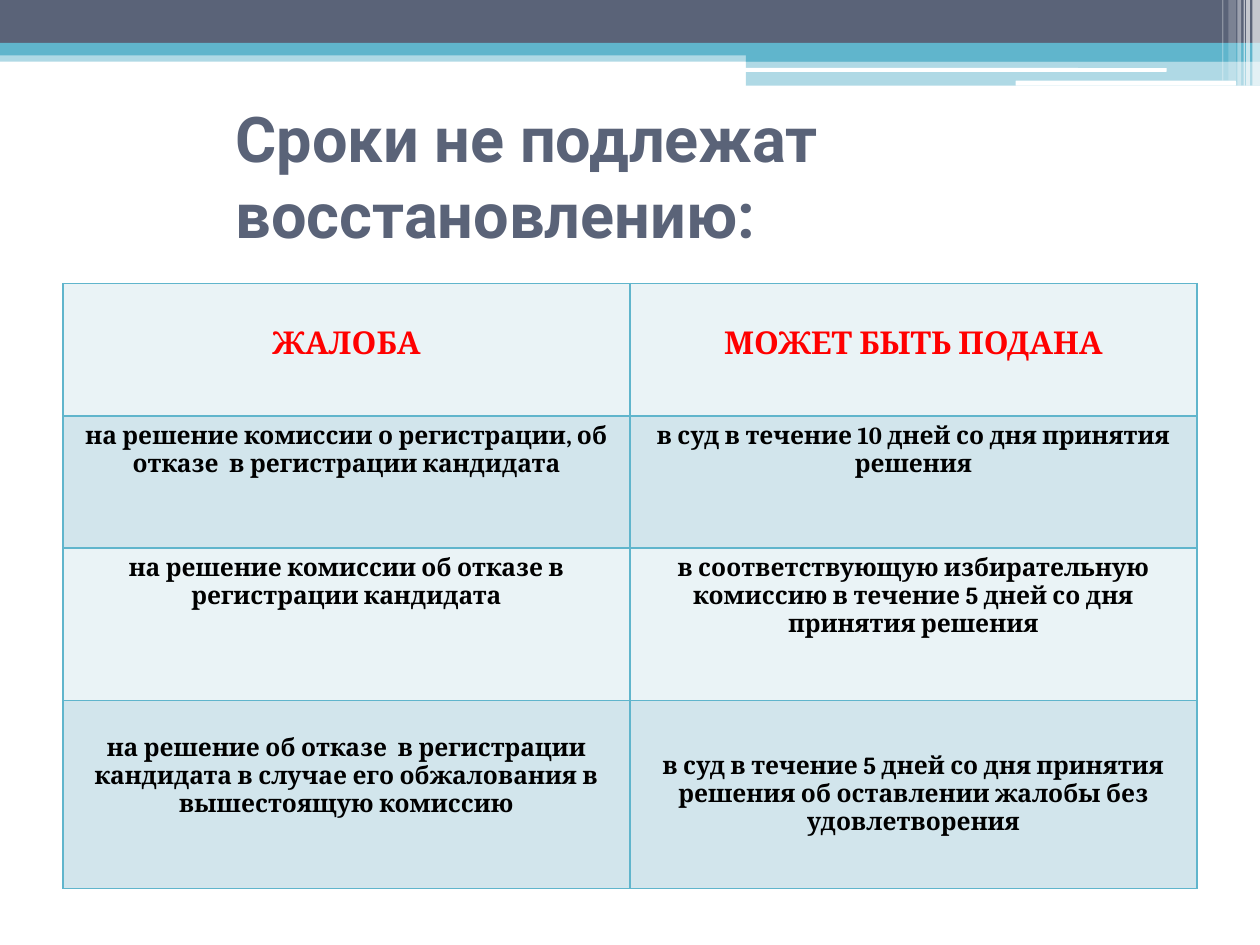
from lxml.etree import SubElement
from pptx import Presentation
from pptx.dml.color import RGBColor
from pptx.enum.shapes import MSO_SHAPE
from pptx.enum.text import MSO_ANCHOR, PP_ALIGN
from pptx.oxml.ns import qn
from pptx.util import Inches, Pt

COLORS = {"slate": "5A6378", "teal": "60B5CC", "white": "FFFFFF", "red": "FF0000",
          "black": "000000", "pale": "EAF3F6", "mist": "D2E5EC"}


def color(name):
    return RGBColor.from_string(COLORS[name])


def add_bar(left, top, width, height, name, alpha=100, kind=MSO_SHAPE.RECTANGLE):
    """Draw a borderless bar; alpha is its opacity in percent."""
    bar = slide.shapes.add_shape(kind, Inches(left), Inches(top), Inches(width), Inches(height))
    bar.shadow.inherit = False
    bar.line.fill.background()
    bar.fill.solid()
    bar.fill.fore_color.rgb = color(name)
    if alpha < 100:
        tint = bar.fill._xPr.find(qn("a:solidFill"))[0]
        SubElement(tint, qn("a:alpha"), val=str(alpha * 1000))


deck = Presentation()
deck.slide_width, deck.slide_height = Inches(10), Inches(7.5)
slide = deck.slides.add_slide(deck.slide_layouts[5])

# Header bands
add_bar(0, 0.4, 10, 0.09, "teal", 50)
add_bar(0, 0, 10, 0.34, "slate")
add_bar(0, 0.34, 10, 0.1, "teal")
add_bar(5.92, 0.39, 4.08, 0.1, "teal")
add_bar(5.92, 0.48, 4.08, 0.2, "teal", 50)
add_bar(5.91, 0.54, 3.35, 0.03, "white", kind=MSO_SHAPE.ROUNDED_RECTANGLE)
add_bar(8.06, 0.64, 1.75, 0.04, "white", kind=MSO_SHAPE.ROUNDED_RECTANGLE)

# Stripes in the corner: left, width, height, opacity
for left, width, height, alpha in [
    (9.94, 0.06, 0.68, 65), (9.89, 0.03, 0.68, 65), (9.87, 0.01, 0.68, 60),
    (9.82, 0.03, 0.68, 40), (9.75, 0.06, 0.64, 20), (9.7, 0.01, 0.64, 30),
]:
    add_bar(left, 0, width, height, "white", alpha)

# Title
title = slide.shapes.title
title.left, title.top = Inches(1.77), Inches(0.68)
title.width, title.height = Inches(7.89), Inches(1.42)
frame = title.text_frame
frame.word_wrap = True
frame.vertical_anchor = MSO_ANCHOR.MIDDLE
par = frame.paragraphs[0]
par.alignment = PP_ALIGN.LEFT
run = par.add_run()
run.text = "Сроки не подлежат восстановлению:"
run.font.name, run.font.size, run.font.bold = "Roboto", Pt(36), True
run.font.color.rgb = color("slate")

# Table: row height, top margin of each cell, texts
rows = [
    (1.05, (0.34, 0.34), ("ЖАЛОБА", "МОЖЕТ БЫТЬ ПОДАНА")),
    (1.05, (0.05, 0.05), ("на решение комиссии о регистрации, об отказе  в регистрации кандидата",
                          "в суд в течение 10 дней со дня принятия решения")),
    (1.21, (0.05, 0.05), ("на решение комиссии об отказе в регистрации кандидата",
                          "в соответствующую избирательную комиссию в течение 5 дней "
                          "со дня принятия решения")),
    (1.49, (0.27, 0.05), ("на решение об отказе  в регистрации кандидата в случае его "
                          "обжалования в вышестоящую комиссию",
                          "в суд в течение 5 дней со дня принятия решения об оставлении "
                          "жалобы без удовлетворения")),
]
table = slide.shapes.add_table(len(rows), 2, Inches(0.5), Inches(2.25),
                               Inches(9), Inches(4.8)).table
for r, (height, tops, texts) in enumerate(rows):
    table.rows[r].height = Inches(height)
    for c, (top, text) in enumerate(zip(tops, texts)):
        cell = table.cell(r, c)
        cell.margin_top = Inches(top)
        props = cell._tc.get_or_add_tcPr()
        for side in ("lnL", "lnR", "lnT", "lnB"):
            edge = SubElement(props, qn(f"a:{side}"), w=str(Pt(1)))
            SubElement(SubElement(edge, qn("a:solidFill")), qn("a:srgbClr"), val=COLORS["teal"])
        cell.fill.solid()
        cell.fill.fore_color.rgb = color("mist" if r % 2 else "pale")
        par = cell.text_frame.paragraphs[0]
        par.alignment = PP_ALIGN.CENTER
        run = par.add_run()
        run.text = text
        run.font.name, run.font.bold = "Cambria", True
        run.font.size = Pt(14 if r else 18)
        run.font.color.rgb = color("black" if r else "red")
table.cell(3, 1).vertical_anchor = MSO_ANCHOR.MIDDLE

deck.save("out.pptx")
